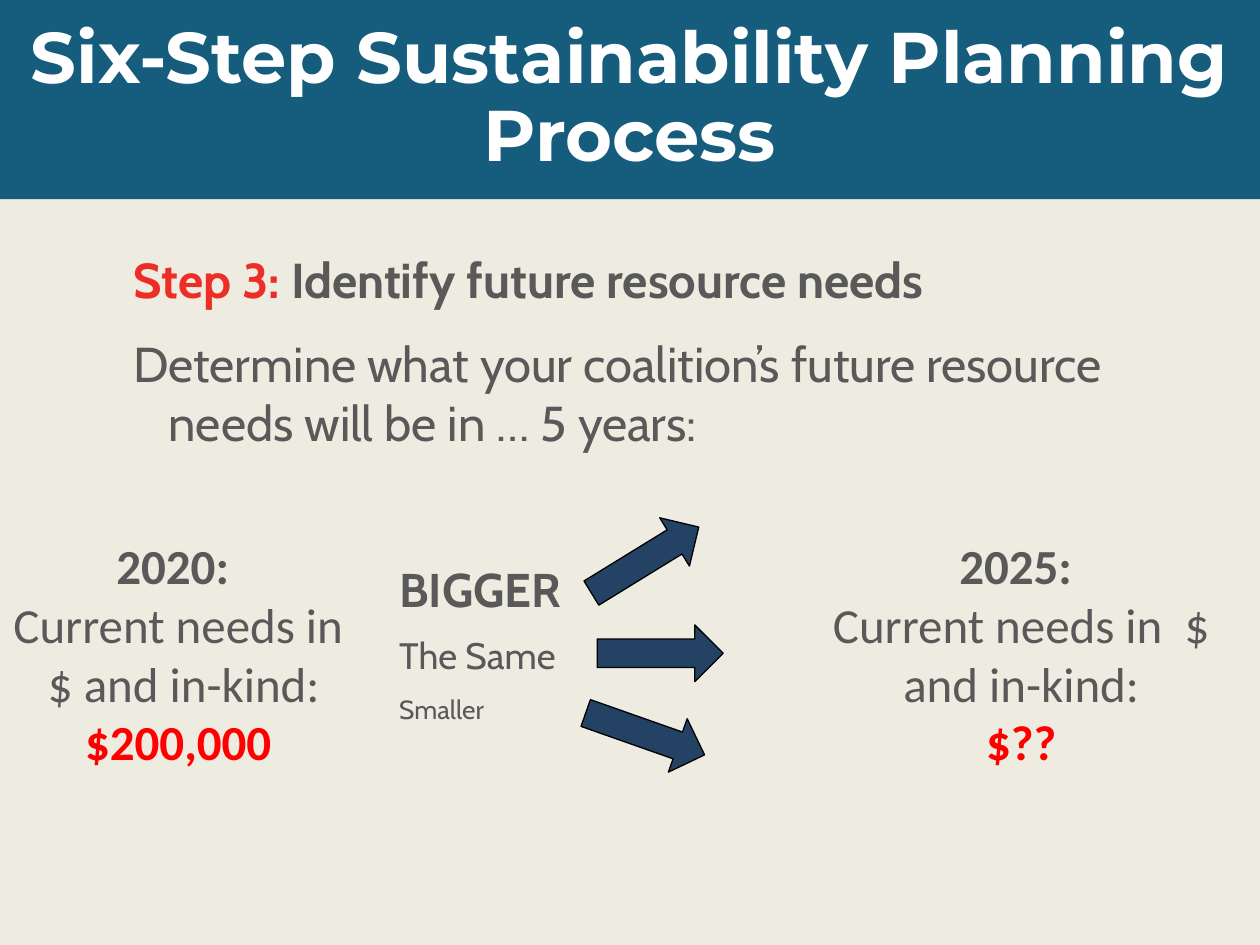
import pptx
import pptx.util
import pptx.dml.color
import pptx.enum.shapes
import pptx.enum.text
import pptx.oxml
from dataclasses import dataclass

Inches, Pt = pptx.util.Inches, pptx.util.Pt
ALIGN = pptx.enum.text.PP_ALIGN
ANCHOR = pptx.enum.text.MSO_ANCHOR


@dataclass(frozen=True)
class Theme:
    background: str = "EEECE1"
    banner: str = "165C7D"
    white: str = "FFFFFF"
    text: str = "595959"
    step: str = "ED2E26"
    amount: str = "FF0000"
    arrow: str = "234264"
    outline: str = "000000"
    title_font: str = "Montserrat"
    body_font: str = "Cabin"
    needs_font: str = "Calibri"
    title_size: float = 41
    body_size: float = 28
    bigger_size: float = 27
    same_size: float = 21
    smaller_size: float = 15


THEME = Theme()

TITLE = "Six-Step Sustainability Planning Process"
STEP = ("Step 3: ", "Identify future resource needs")
TASK = "Determine what your coalition’s future resource needs will be in … 5 years:"
NEEDS = "Current needs in  $ and in-kind:"
# year, amount, left, width
YEARS = [
    ("2020: ", "$200,000", 0, 2.83),
    ("2025: ", "$??", 6.47, 3.27),
]
# text, size, bold
OUTCOMES = [
    ("BIGGER", THEME.bigger_size, True),
    ("The Same", THEME.same_size, False),
    ("Smaller", THEME.smaller_size, False),
]
# left, top, rotation
ARROWS = [(4.62, 4.22, 328.4), (4.74, 4.96, 0), (4.62, 5.6, 19.4)]
ARROW_SIZE = (1, 0.45)
OUTCOME_GAP = 9


def rgb(value):
    return pptx.dml.color.RGBColor.from_string(value)


def place(shape, left, top, width, height):
    shape.left, shape.top = Inches(left), Inches(top)
    shape.width, shape.height = Inches(width), Inches(height)


def add_text(frame, text, *, size=THEME.body_size, font=THEME.body_font,
             color=THEME.text, bold=False, align=ALIGN.LEFT, before=0,
             spacing=1.0, hanging=0, same_line=False):
    """Write a run in a new paragraph, or on the last one if same_line."""
    paragraph = frame.paragraphs[-1]
    if paragraph.runs and not same_line:
        paragraph = frame.add_paragraph()
    if not same_line:
        paragraph.alignment = align
        paragraph.space_before = Pt(before)
        paragraph.line_spacing = spacing
        properties = paragraph._p.get_or_add_pPr()
        properties.set("marL", str(Inches(hanging)))
        properties.set("indent", str(-Inches(hanging)))
        properties.append(pptx.oxml.parse_xml(
            '<a:buNone xmlns:a="http://schemas.openxmlformats.org/drawingml/2006/main"/>'))
    run = paragraph.add_run()
    run.text = text
    run.font.size, run.font.name, run.font.bold = Pt(size), font, bold
    run.font.color.rgb = rgb(color)


def prepare(frame, anchor=ANCHOR.TOP):
    frame.word_wrap = True
    frame.auto_size = pptx.enum.text.MSO_AUTO_SIZE.NONE
    frame.vertical_anchor = anchor
    return frame


def add_box(slide, *bounds):
    return prepare(slide.shapes.add_textbox(*map(Inches, bounds)).text_frame)


def add_heading(slide):
    title = slide.shapes.title
    place(title, 0, 0, 10, 1.58)
    title.fill.solid()
    title.fill.fore_color.rgb = rgb(THEME.banner)
    add_text(prepare(title.text_frame, ANCHOR.MIDDLE), TITLE,
             size=THEME.title_size, font=THEME.title_font, color=THEME.white,
             bold=True, align=ALIGN.CENTER, spacing=0.9)

    step = slide.placeholders[1]
    place(step, 0.96, 1.93, 7.5, 0.62)
    frame = prepare(step.text_frame)
    add_text(frame, STEP[0], color=THEME.step, bold=True)
    add_text(frame, STEP[1], bold=True, same_line=True)

    add_text(add_box(slide, 0.96, 2.6, 8.09, 1.04), TASK, hanging=0.28)


def add_outcomes(slide):
    frame = add_box(slide, 3.07, 4.4, 1.6, 1.41)
    for index, (outcome, size, bold) in enumerate(OUTCOMES):
        add_text(frame, outcome, size=size, bold=bold,
                 before=OUTCOME_GAP if index else 0)
    for left, top, rotation in ARROWS:
        arrow = slide.shapes.add_shape(
            pptx.enum.shapes.MSO_SHAPE.RIGHT_ARROW,
            *map(Inches, (left, top, *ARROW_SIZE)))
        arrow.rotation = rotation
        arrow.shadow.inherit = False
        arrow.fill.solid()
        arrow.fill.fore_color.rgb = rgb(THEME.arrow)
        arrow.line.color.rgb = rgb(THEME.outline)
        arrow.line.width = Pt(0.75)


def add_years(slide):
    for year, amount, left, width in YEARS:
        frame = add_box(slide, left, 4.2, width, 1.99)
        shared = {"font": THEME.needs_font, "align": ALIGN.CENTER}
        add_text(frame, year, bold=True, **shared)
        add_text(frame, NEEDS, **shared)
        add_text(frame, amount, color=THEME.amount, bold=True, **shared)


def main():
    deck = pptx.Presentation()
    deck.slide_width, deck.slide_height = Inches(10), Inches(7.5)
    slide = deck.slides.add_slide(deck.slide_layouts[1])
    slide.background.fill.solid()
    slide.background.fill.fore_color.rgb = rgb(THEME.background)
    add_heading(slide)
    add_outcomes(slide)
    add_years(slide)
    deck.save("out.pptx")


if __name__ == "__main__":
    main()
